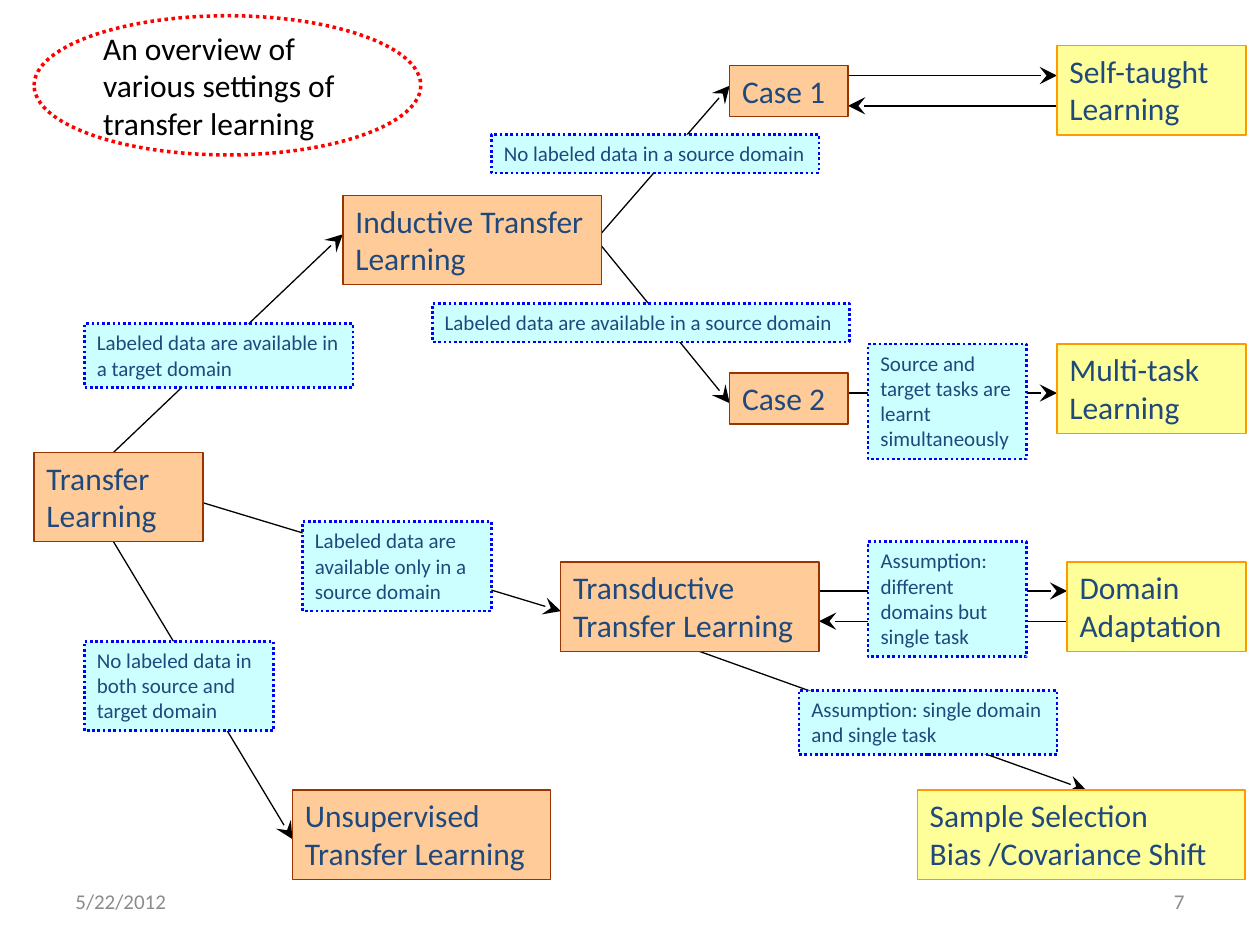
from lxml import etree
from pptx import Presentation
from pptx import util as u
from pptx.dml.color import RGBColor
from pptx.enum import dml, shapes, text
from pptx.oxml.ns import qn

FONT = "Calibri"
NAVY = "1F497D"
GREY = "8C8C8C"
LINE_HEIGHT = 1.22
INSETS = 7.2

# fill, outline, outline width, dash, text size
SETTING = ("FFCC99", "993300", 0.75, None, 18)
METHOD = ("FFFF99", "FF9900", 0.75, None, 18)
CONDITION = ("CCFFFF", "0000FF", 1.5, dml.MSO_LINE.ROUND_DOT, 12)


def color(value):
    return RGBColor.from_string(value)


def write(shape, words, size=18, ink=NAVY, align=text.PP_ALIGN.LEFT,
          anchor=text.MSO_ANCHOR.TOP):
    frame = shape.text_frame
    frame.word_wrap = True
    frame.vertical_anchor = anchor
    for index, line in enumerate(words.split("\n")):
        para = frame.add_paragraph() if index else frame.paragraphs[0]
        para.alignment = align
        span = para.add_run()
        span.text = line
        span.font.name = FONT
        span.font.size = u.Pt(size)
        span.font.color.rgb = color(ink)


def add_outlined(page, kind, box, fill, outline, weight, dash):
    shape = page.shapes.add_shape(kind, *map(u.Pt, box))
    shape.shadow.inherit = False
    if fill:
        shape.fill.solid()
        shape.fill.fore_color.rgb = color(fill)
    else:
        shape.fill.background()
    shape.line.color.rgb = color(outline)
    shape.line.width = u.Pt(weight)
    if dash:
        shape.line.dash_style = dash
    return shape


def add_box(page, origin, x, y, width, lines, words, style):
    """Add a box whose height follows from its number of text lines."""
    fill, outline, weight, dash, size = style
    height = lines * size * LINE_HEIGHT + INSETS
    box = (origin[0] + x, origin[1] + y, width, height)
    shape = add_outlined(page, shapes.MSO_SHAPE.RECTANGLE, box,
                         fill, outline, weight, dash)
    write(shape, words, size)


def add_arrow(page, origin, start, end, tip="tailEnd"):
    left, top = origin
    arrow = page.shapes.add_connector(
        shapes.MSO_CONNECTOR.STRAIGHT,
        u.Pt(left + start[0]), u.Pt(top + start[1]),
        u.Pt(left + end[0]), u.Pt(top + end[1]))
    arrow.line.color.rgb = color("000000")
    arrow.line.width = u.Pt(0.75)
    etree.SubElement(arrow.line._get_or_add_ln(), qn("a:" + tip),
                     type="stealth", w="lg", len="lg")
    etree.SubElement(arrow._element.spPr, qn("a:effectLst"))


def add_region(page, origin, arrows, boxes):
    """Place arrows first, so that the condition boxes cover them."""
    for arrow in arrows:
        add_arrow(page, origin, *arrow)
    for box in boxes:
        add_box(page, origin, *box)


def add_root(page, origin):
    add_region(page, origin, [
        ((45.4, 73.5), (176.4, -51.1)),
        ((96.5, 102.3), (301, 164.2)),
        ((45.4, 124.6), (147.6, 294.5)),
    ], [
        (0, 73.5, 96.5, 2, "Transfer Learning", SETTING),
        (147.6, 266.4, 147.6, 2, "Unsupervised Transfer Learning", SETTING),
        (28.8, 0, 153.4, 2,
         "Labeled data are available in a target domain", CONDITION),
        (153.4, 113.1, 108, 3,
         "Labeled data are available only in a source domain", CONDITION),
        (28.8, 181.5, 108, 3,
         "No labeled data in both source and target domain", CONDITION),
    ])


def add_inductive(page, origin):
    add_region(page, origin, [
        ((147, 108), (221, 23)),
        ((147, 113.7), (221, 204.4)),
        ((288.6, 17.2), (408, 17.2)),
        ((288.6, 34.5), (408, 34.5), "headEnd"),
        ((288.6, 198.6), (408, 198.6)),
    ], [
        (0, 85.6, 147.6, 2, "Inductive Transfer Learning", SETTING),
        (221, 11.4, 67.7, 1, "Case 1", SETTING),
        (221, 187.2, 67.7, 1, "Case 2", SETTING),
        (408, 0, 108, 2, "Self-taught Learning", METHOD),
        (408, 170.6, 108, 2, "Multi-task Learning", METHOD),
        (84.8, 51, 187.2, 1, "No labeled data in a source domain", CONDITION),
        (51, 147.6, 238.3, 1,
         "Labeled data are available in a source domain", CONDITION),
        (300, 170.6, 90.7, 4,
         "Source and target tasks are learnt simultaneously", CONDITION),
    ])


def add_transductive(page, origin):
    add_region(page, origin, [
        ((147.6, 28.1), (289.4, 28.1)),
        ((147.6, 45.4), (289.4, 45.4), "headEnd"),
        ((79.2, 62.6), (300.2, 141.8)),
    ], [
        (0, 11.5, 147.6, 2, "Transductive Transfer Learning", SETTING),
        (289.4, 11.5, 102.2, 2, "Domain Adaptation", METHOD),
        (203.8, 141.8, 187.2, 2,
         "Sample Selection Bias /Covariance Shift", METHOD),
        (175.7, 0, 90.7, 4,
         "Assumption: different domains but single task", CONDITION),
        (136.1, 85, 147.6, 2,
         "Assumption: single domain and single task", CONDITION),
    ])


def add_title(page, box):
    oval = add_outlined(page, shapes.MSO_SHAPE.OVAL, box, None, "FF0000", 2,
                        dml.MSO_LINE.ROUND_DOT)
    write(oval, "An overview of\nvarious settings of\ntransfer learning",
          ink="000000", anchor=text.MSO_ANCHOR.MIDDLE)


def add_footer(page, box):
    left, top, width, height = box
    part = 168
    for x, words, align in (
            (left, "5/22/2012", text.PP_ALIGN.LEFT),
            (left + width - part, "7", text.PP_ALIGN.RIGHT)):
        area = page.shapes.add_textbox(*map(u.Pt, (x, top, part, height)))
        write(area, words, size=12, ink=GREY, align=align,
              anchor=text.MSO_ANCHOR.MIDDLE)


def main():
    deck = Presentation()
    deck.slide_width, deck.slide_height = u.Pt(720), u.Pt(540)
    page = deck.slides.add_slide(deck.slide_layouts[6])
    add_root(page, (19.5, 185))
    add_inductive(page, (196, 26))
    add_transductive(page, (320.4, 309.6))
    add_title(page, (19.5, 9, 221, 79.5))
    add_footer(page, (36, 500.5, 648, 28.8))
    deck.save("out.pptx")


if __name__ == "__main__":
    main()
